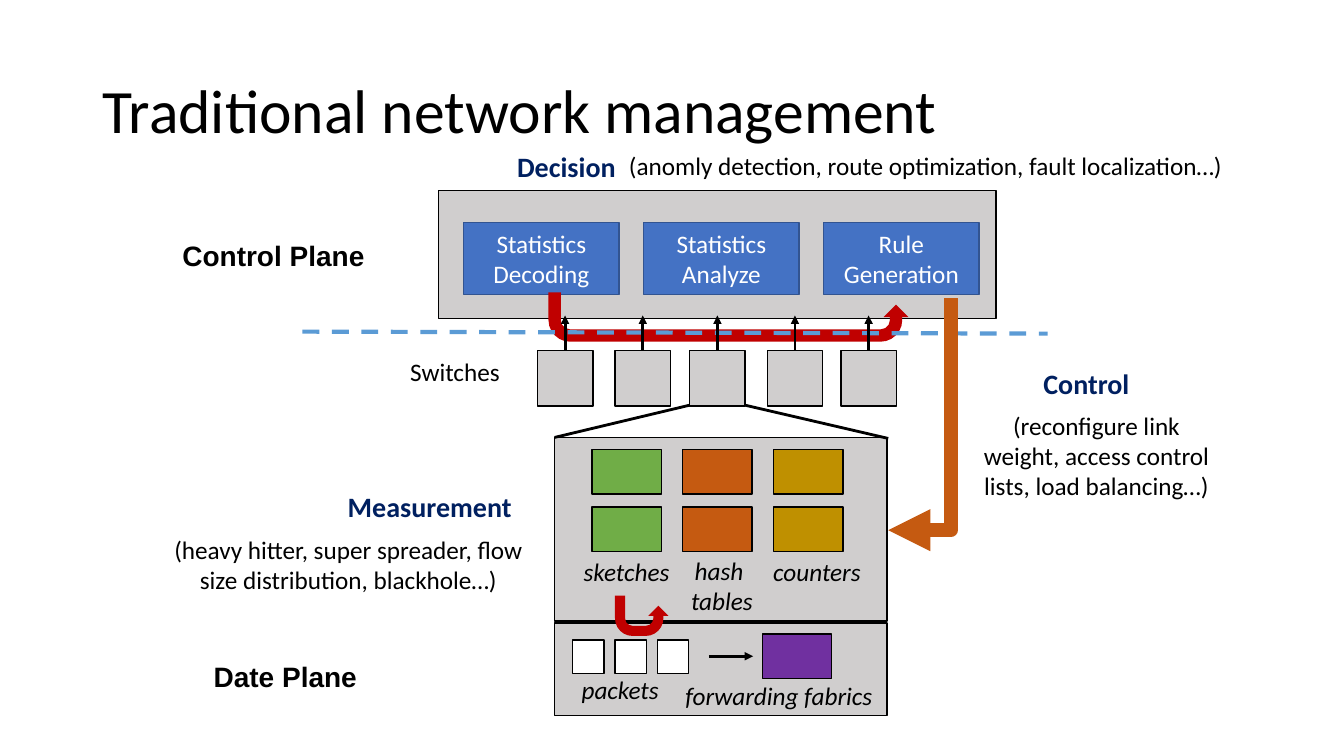
import pptx
import pptx.dml.color
import pptx.enum.dml
import pptx.enum.shapes
import pptx.enum.text
import pptx.oxml.ns
import pptx.util
from lxml import etree

Inches = pptx.util.Inches
Pt = pptx.util.Pt
RGBColor = pptx.dml.color.RGBColor
Shapes = pptx.enum.shapes.MSO_SHAPE
Connectors = pptx.enum.shapes.MSO_CONNECTOR
Align = pptx.enum.text.PP_ALIGN
Anchor = pptx.enum.text.MSO_ANCHOR
qn = pptx.oxml.ns.qn

BLACK = RGBColor(0x00, 0x00, 0x00)
WHITE = RGBColor(0xFF, 0xFF, 0xFF)
GRAY = RGBColor(0xD0, 0xCE, 0xCE)
BLUE = RGBColor(0x44, 0x72, 0xC4)
BLUE_EDGE = RGBColor(0x32, 0x54, 0x91)
LIGHT_BLUE = RGBColor(0x5B, 0x9B, 0xD5)
NAVY = RGBColor(0x00, 0x20, 0x60)
RED = RGBColor(0xC0, 0x00, 0x00)
GREEN = RGBColor(0x70, 0xAD, 0x47)
ORANGE = RGBColor(0xC5, 0x5A, 0x11)
GOLD = RGBColor(0xBF, 0x90, 0x00)
PURPLE = RGBColor(0x70, 0x30, 0xA0)


def write(frame, text, size=18, color=BLACK, font="Calibri", bold=False, italic=False, align=Align.LEFT):
    """Fill a text frame and format every run alike."""
    frame.text = text
    for para in frame.paragraphs:
        para.alignment = align
        for span in para.runs:
            span.font.name = font
            span.font.size = Pt(size)
            span.font.color.rgb = color
            span.font.bold = bold
            span.font.italic = italic


def add_label(page, text, left, top, width, height, wrap=False, **style):
    """Add a text box and return its frame."""
    frame = page.shapes.add_textbox(Inches(left), Inches(top), Inches(width), Inches(height)).text_frame
    frame.word_wrap = wrap
    write(frame, text, **style)
    return frame


def add_box(page, left, top, width, height, fill, edge=BLACK, kind=Shapes.RECTANGLE):
    """Add a flat filled shape, outlined unless edge is None."""
    box = page.shapes.add_shape(kind, Inches(left), Inches(top), Inches(width), Inches(height))
    box.shadow.inherit = False
    box.fill.solid()
    box.fill.fore_color.rgb = fill
    if edge is None:
        box.line.fill.background()
    else:
        box.line.color.rgb = edge
        box.line.width = Pt(1)
    return box


def add_loop_arrow(page, left, top, width, height):
    """Add a red U-turn arrow that dips downward."""
    arrow = add_box(page, left, top, width, height, RED, None, Shapes.U_TURN_ARROW)
    arrow._element.spPr.find(qn("a:xfrm")).set("flipV", "1")


def add_line(page, start, end, color=BLACK, width=2, arrow=False, kind=Connectors.STRAIGHT):
    """Add a connector without shadow, with an optional arrowhead at its end."""
    line = page.shapes.add_connector(kind, *(Inches(value) for value in (*start, *end)))
    line.line.color.rgb = color
    line.line.width = Pt(width)
    if arrow:
        etree.SubElement(line.line._get_or_add_ln(), qn("a:tailEnd"), type="triangle")
    etree.SubElement(line._element.spPr, qn("a:effectLst"))
    return line


def draw_title(page, left, top, width, height):
    """Place the slide title."""
    frame = add_label(page, "Traditional network management", left, top, width, height, wrap=True, size=44)
    frame.vertical_anchor = Anchor.MIDDLE
    frame.paragraphs[0].line_spacing = 0.9


def draw_control_plane(page, left, top, width, height):
    """Place the controller panel, its three stages and the decision loop."""
    add_box(page, left, top, width, height, GRAY)
    for index, stage in enumerate(("Statistics Decoding", "Statistics Analyze", "Rule Generation")):
        box = add_box(page, left + 0.25 + 1.785 * index, top + 0.32, 1.54, 0.71, BLUE, BLUE_EDGE)
        box.text_frame.word_wrap = True
        box.text_frame.vertical_anchor = Anchor.MIDDLE
        write(box.text_frame, stage, color=WHITE, align=Align.CENTER)
    add_loop_arrow(page, left + 1.09, top + 1.01, 3.57, 0.49)


def draw_switches(page, left, top, size):
    """Place the row of switches, each reporting upward."""
    for offset in (0, 0.77, 1.51, 2.28, 3.01):
        switch = add_box(page, left + offset, top, size, size, GRAY)
        middle = left + offset + size / 2
        report = add_line(page, (middle, top), (middle, top - 0.35), arrow=True)
        report.begin_connect(switch, 0)


def draw_measurement(page, left, top, width, height):
    """Place the panel of measurement structures."""
    add_box(page, left, top, width, height, GRAY)
    for column, color in enumerate((GREEN, ORANGE, GOLD)):
        for row in range(2):
            add_box(page, left + 0.37 + 0.9 * column, top + 0.12 + 0.57 * row, 0.69, 0.44, color)
    add_label(page, "sketches", left + 0.19, top + 1.13, 1.08, 0.4, italic=True)
    add_label(page, "hash \ntables", left + 1.25, top + 1.12, 0.82, 0.71, italic=True, align=Align.CENTER)
    add_label(page, "counters", left + 2.07, top + 1.13, 1.09, 0.4, italic=True)


def draw_forwarding(page, left, top, width, height):
    """Place the packet forwarding panel and the measuring loop."""
    add_box(page, left, top, width, height, GRAY)
    add_box(page, left + 2.06, top + 0.11, 0.69, 0.44, PURPLE)
    add_label(page, "forwarding fabrics", left + 1.19, top + 0.52, 2.07, 0.4, italic=True, align=Align.CENTER)
    for index in range(3):
        add_box(page, left + 0.18 + 0.42 * index, top + 0.17, 0.31, 0.33, WHITE)
    add_line(page, (left + 1.53, top + 0.33), (left + 1.97, top + 0.33), arrow=True)
    add_label(page, "packets", left + 0.17, top + 0.46, 0.98, 0.4, italic=True)
    add_loop_arrow(page, left + 0.6, top - 0.27, 0.53, 0.4)


def draw_links(page):
    """Place the plane divider, the zoom lines and the control arrow."""
    add_line(page, (6.84, 4.02), (5.5, 4.34))
    add_line(page, (7.39, 4.02), (8.81, 4.35))
    divider = add_line(page, (3, 3.29), (10.39, 3.31), LIGHT_BLUE, 3)
    divider.line.dash_style = pptx.enum.dml.MSO_LINE.DASH
    control = add_line(page, (7.97, 3.8), (10.27, 4.42), ORANGE, 10, True, Connectors.ELBOW)
    properties = control._element.spPr
    properties.find(qn("a:xfrm")).set("rot", "5400000")
    properties.find(qn("a:prstGeom")).set("prst", "bentConnector2")


def draw_captions(page):
    """Place the captions around the diagram."""
    heading = {"size": 20, "bold": True}
    for text, left, top, width in (("Decision", 5.03, 1.43, 1.19), ("Measurement", 3.35, 4.81, 1.84),
                                   ("Control", 10.25, 3.59, 1.06)):
        add_label(page, text, left, top, width, 0.44, color=NAVY, **heading)
    for text, left, top, width in (("Control Plane", 1.71, 2.32, 2.03), ("Date Plane", 2.02, 6.49, 1.64)):
        add_label(page, text, left, top, width, 0.44, font="Arial", **heading)
    add_label(page, "(anomly detection, route optimization, fault localization…)", 6.14, 1.44, 6.16, 0.4)
    add_label(page, "Switches", 3.97, 3.49, 1.1, 0.4)
    add_label(page, "(heavy hitter, super spreader, flow size distribution, blackhole…)",
              1.58, 5.25, 3.75, 0.71, wrap=True, align=Align.CENTER)
    add_label(page, "(reconfigure link weight, access control lists, load balancing…)",
              9.59, 4.02, 2.57, 1.01, wrap=True, align=Align.CENTER)


def main():
    """Build and save the one-slide deck."""
    deck = pptx.Presentation()
    deck.slide_width = Inches(13.33)
    deck.slide_height = Inches(7.5)
    page = deck.slides.add_slide(deck.slide_layouts[6])
    draw_title(page, 0.92, 0.4, 11.5, 1.45)
    draw_control_plane(page, 4.35, 1.89, 5.53, 1.27)
    draw_measurement(page, 5.5, 4.34, 3.3, 1.82)
    draw_forwarding(page, 5.5, 6.18, 3.3, 0.92)
    draw_links(page)
    draw_switches(page, 5.33, 3.48, 0.55)
    draw_captions(page)
    deck.save("out.pptx")


if __name__ == "__main__":
    main()
